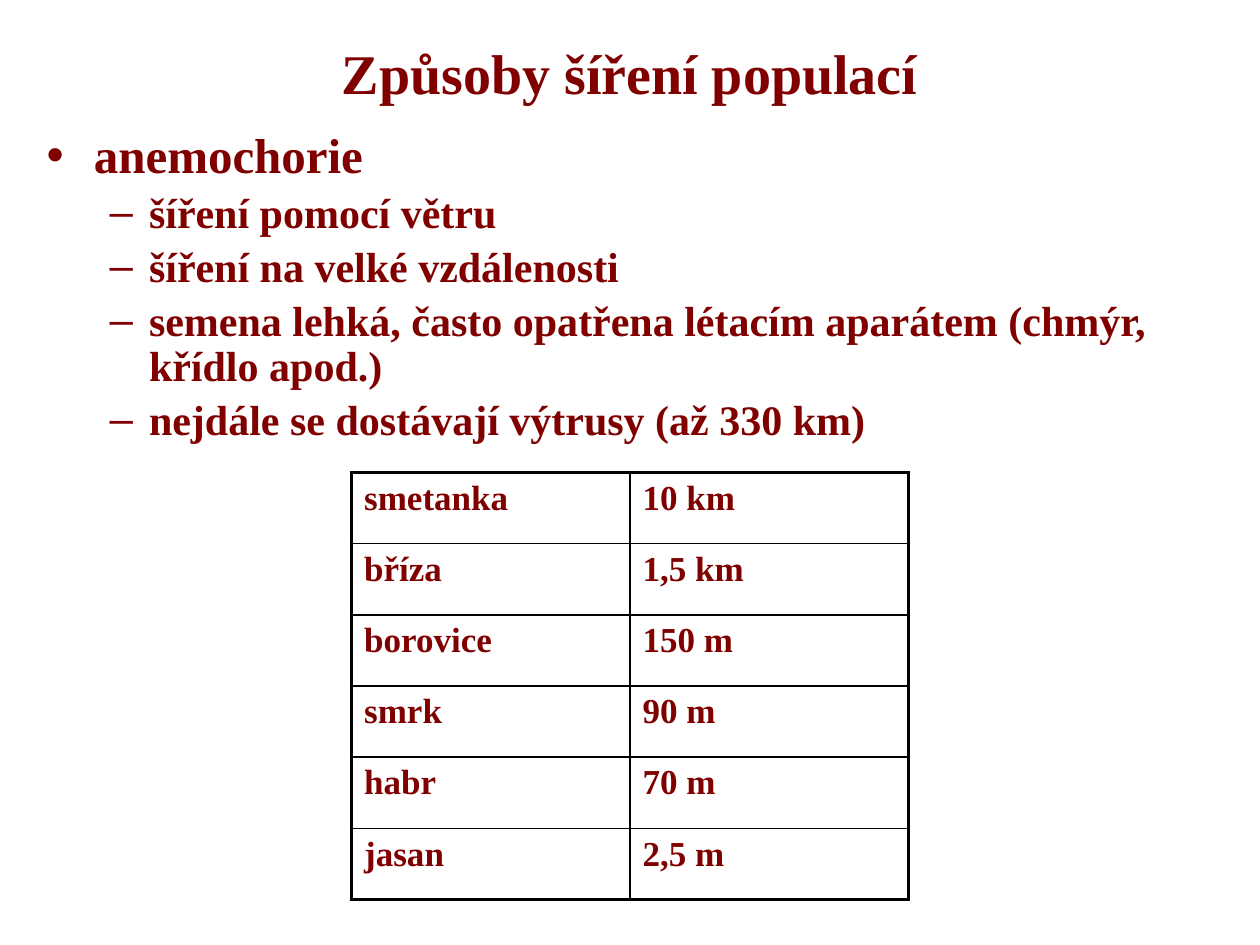
"""Build a slide on how populations spread, with a list and a distance table."""
from lxml import etree
from pptx import Presentation
from pptx.dml.color import RGBColor
from pptx.enum.text import MSO_AUTO_SIZE
from pptx.oxml.ns import qn
from pptx.util import Inches, Pt

NO_AUTOFIT = MSO_AUTO_SIZE.NONE
FONT_NAME = "Times New Roman"
TEXT_COLOR = "800000"
BORDER_COLOR = "000000"
OUTER_WIDTH, INNER_WIDTH = 2.25, 1

TITLE = "Způsoby šíření populací"
POINTS = [
    (0, "anemochorie"),
    (1, "šíření pomocí větru"),
    (1, "šíření na velké vzdálenosti"),
    (1, "semena lehká, často opatřena létacím aparátem (chmýr, křídlo apod.)"),
    (1, "nejdále se dostávají výtrusy (až 330 km)"),
]
LEVEL_SIZES = {0: 28, 1: 24}
DISTANCES = [
    ("smetanka", "10 km"),
    ("bříza", "1,5 km"),
    ("borovice", "150 m"),
    ("smrk", "90 m"),
    ("habr", "70 m"),
    ("jasan", "2,5 m"),
]


def color(value):
    """Return the colour for a hex string."""
    return RGBColor.from_string(value)


def add_span(para, text, size):
    """Add bold dark red text to a paragraph."""
    span = para.add_run()
    span.text = text
    for name, value in {"name": FONT_NAME, "size": Pt(size), "bold": True}.items():
        setattr(span.font, name, value)
    span.font.color.rgb = color(TEXT_COLOR)


def place(box, left, top, width, height):
    """Move and size a placeholder, keeping its text size fixed."""
    bounds = {"left": left, "top": top, "width": width, "height": height}
    for name, value in bounds.items():
        setattr(box, name, Inches(value))
    box.text_frame.auto_size = NO_AUTOFIT


def fill_title(box):
    """Place and write the title."""
    place(box, 0.5, 0.3, 9, 0.54)
    add_span(box.text_frame.paragraphs[0], TITLE, 32)


def fill_points(box):
    """Place and write the two-level list."""
    place(box, 0.27, 0.99, 9.34, 2.76)
    frame = box.text_frame
    for index, (level, text) in enumerate(POINTS):
        para = frame.add_paragraph() if index else frame.paragraphs[0]
        para.level = level
        para.line_spacing = 0.9
        if index == 0:
            para.space_before = Pt(0)
        add_span(para, text, LEVEL_SIZES[level])


def set_borders(cell, widths):
    """Draw the cell borders, given widths for left, right, top and bottom."""
    properties = cell._tc.get_or_add_tcPr()
    for index, (side, width) in enumerate(zip("LRTB", widths)):
        line = etree.Element(qn(f"a:ln{side}"), w=str(Pt(width)))
        fill = etree.SubElement(line, qn("a:solidFill"))
        etree.SubElement(fill, qn("a:srgbClr"), val=BORDER_COLOR)
        properties.insert(index, line)


def add_distance_table(slide):
    """Add the table of dispersal distances with a heavier outer frame."""
    row_count, column_count = len(DISTANCES), len(DISTANCES[0])
    table = slide.shapes.add_table(
        row_count, column_count, Inches(2.79), Inches(3.75), Inches(4.42), Inches(3.39)
    ).table
    table.first_row = False
    table.horz_banding = False
    for row, texts in enumerate(DISTANCES):
        for column, text in enumerate(texts):
            cell = table.cell(row, column)
            cell.fill.background()
            add_span(cell.text_frame.paragraphs[0], text, 20)
            on_edge = (
                column == 0,
                column == column_count - 1,
                row == 0,
                row == row_count - 1,
            )
            set_borders(cell, [OUTER_WIDTH if edge else INNER_WIDTH for edge in on_edge])


def main():
    """Build and save the deck."""
    deck = Presentation()
    deck.slide_width, deck.slide_height = Inches(10), Inches(7.5)
    page = deck.slides.add_slide(deck.slide_layouts[1])
    fill_title(page.shapes.title)
    fill_points(page.placeholders[1])
    add_distance_table(page)
    deck.save("out.pptx")


if __name__ == "__main__":
    main()
